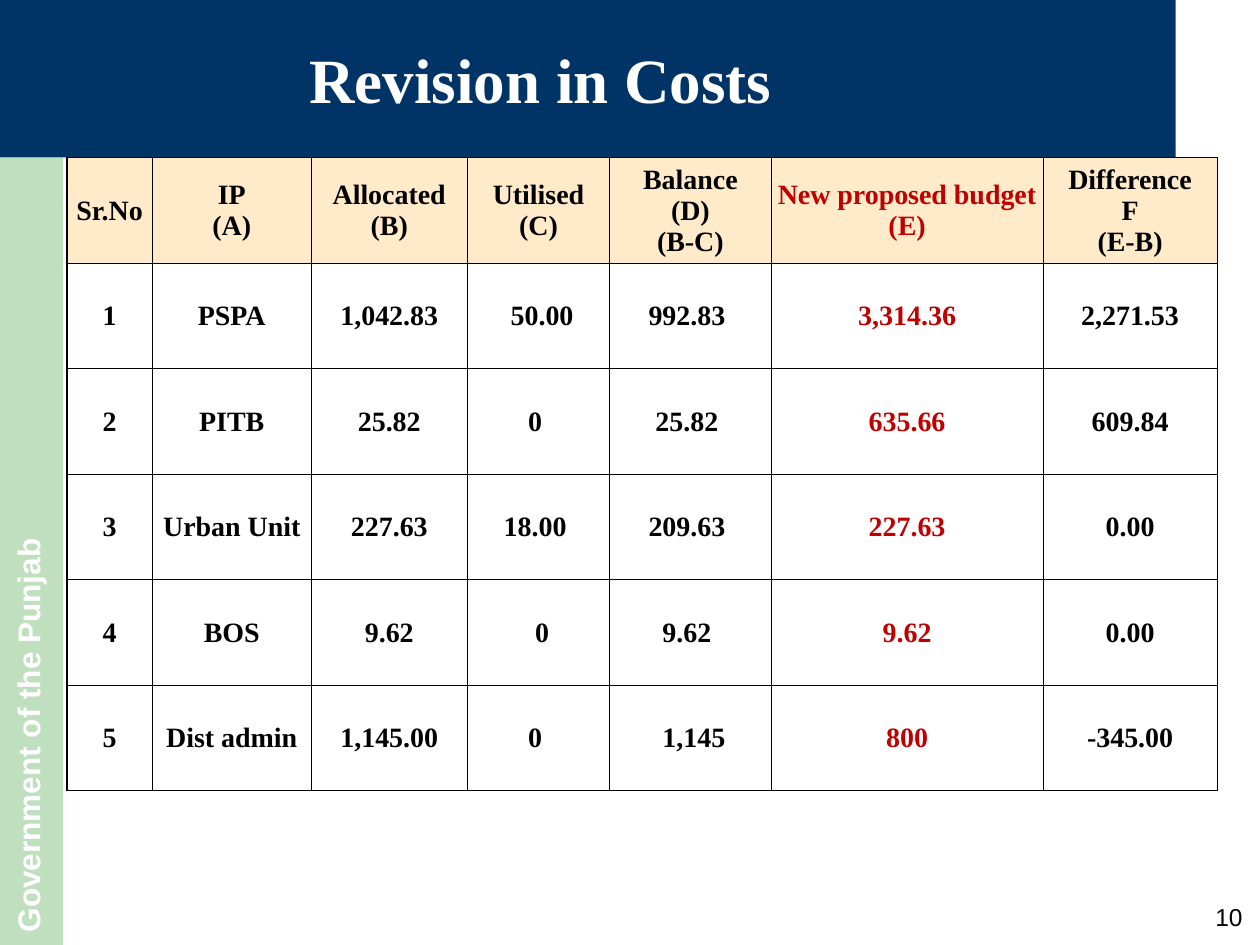
"""Build the slide with the table of cost revisions."""
from dataclasses import dataclass

from lxml import etree
from pptx import Presentation
from pptx.dml.color import RGBColor
from pptx.enum.shapes import MSO_SHAPE
from pptx.enum.text import MSO_ANCHOR, PP_ALIGN
from pptx.oxml.ns import qn
from pptx.util import Inches, Pt

RECTANGLE = MSO_SHAPE.RECTANGLE
MIDDLE, TOP = MSO_ANCHOR.MIDDLE, MSO_ANCHOR.TOP
LEFT, CENTER, RIGHT = PP_ALIGN.LEFT, PP_ALIGN.CENTER, PP_ALIGN.RIGHT
SLIDE_WIDTH, SLIDE_HEIGHT = Inches(10), Inches(7.5)
TITLE_ONLY_LAYOUT = 5


@dataclass(frozen=True)
class Theme:
    navy: str = "003366"
    green: str = "008000"
    cream: str = "FFEACA"
    red: str = "C00000"
    black: str = "000000"
    white: str = "FFFFFF"
    serif: str = "Times New Roman"
    sans: str = "Arial"
    title_size: int = 36
    band_size: int = 18
    table_size: int = 16
    number_size: int = 14
    outer_line: float = 1
    inner_line: float = 0.5


@dataclass(frozen=True)
class Area:
    """Shares of the slide's width and height."""
    left: float
    top: float
    width: float
    height: float

    def lengths(self) -> tuple:
        return (int(self.left * SLIDE_WIDTH), int(self.top * SLIDE_HEIGHT),
                int(self.width * SLIDE_WIDTH), int(self.height * SLIDE_HEIGHT))


@dataclass(frozen=True)
class Column:
    heading: str
    width: float
    values: tuple
    color: str


THEME = Theme()
HEADER_HEIGHT = 1 / 6
TITLE_AREA = Area(0, 0, 0.858, HEADER_HEIGHT)
CORNER_AREA = Area(0.858, 0, 0.075, HEADER_HEIGHT)
BAND_AREA = Area(0, HEADER_HEIGHT, 0.05, 1 - HEADER_HEIGHT)
TABLE_AREA = Area(0.053, HEADER_HEIGHT, 0.914, 0.67)
NUMBER_AREA = Area(0.879, 0.948, 0.117, 0.04)
COLUMNS = (
    Column("Sr.No", 0.068, ("1", "2", "3", "4", "5"), THEME.black),
    Column("IP\n(A)", 0.126, ("PSPA", "PITB", "Urban Unit", "BOS", "Dist admin"), THEME.black),
    Column("Allocated\n(B)", 0.124, ("1,042.83", "25.82", "227.63", "9.62", "1,145.00"), THEME.black),
    Column("Utilised\n(C)", 0.113, (" 50.00", "0 ", "18.00 ", " 0", "0 "), THEME.black),
    Column("Balance\n(D)\n(B-C)", 0.128, ("992.83 ", "25.82 ", "209.63 ", "9.62 ", " 1,145"), THEME.black),
    Column("New proposed budget\n(E)", 0.216, ("3,314.36", "635.66", "227.63", "9.62", "800"), THEME.red),
    Column("Difference\nF\n(E-B)", 0.138, ("2,271.53", "609.84", "0.00", "0.00", "-345.00"), THEME.black),
)


def write_text(frame, text: str, *, size: float, font: str, color: str,
               bold: bool = True, align=CENTER) -> None:
    frame.text = text
    for paragraph in frame.paragraphs:
        paragraph.alignment = align
        for run in paragraph.runs:
            run.font.size, run.font.name, run.font.bold = Pt(size), font, bold
            run.font.color.rgb = RGBColor.from_string(color)


def place(shape, area: Area) -> None:
    shape.left, shape.top, shape.width, shape.height = area.lengths()


def paint(shape, color: str) -> None:
    shape.fill.solid()
    shape.fill.fore_color.rgb = RGBColor.from_string(color)


def add_rectangle(slide, area: Area, color: str):
    shape = slide.shapes.add_shape(RECTANGLE, *area.lengths())
    shape.shadow.inherit = False
    shape.line.fill.background()
    paint(shape, color)
    return shape


def add_title(slide) -> None:
    title = slide.shapes.title
    place(title, TITLE_AREA)
    paint(title, THEME.navy)
    title.text_frame.vertical_anchor = MIDDLE
    write_text(title.text_frame, "Revision in Costs", size=THEME.title_size,
               font=THEME.serif, color=THEME.white)


def add_side_band(slide) -> None:
    band = add_rectangle(slide, BAND_AREA, THEME.green)
    color = band.fill._xPr.find(qn("a:solidFill"))[0]
    etree.SubElement(color, qn("a:alpha"), val="25000")
    frame = band.text_frame
    frame.vertical_anchor = MIDDLE
    frame.margin_left, frame.margin_right, frame.margin_bottom = 0, Inches(0.06), Inches(0.1)
    frame._txBody.bodyPr.set("vert", "vert270")
    write_text(frame, "Government of the Punjab", size=THEME.band_size,
               font=THEME.sans, color=THEME.white, align=LEFT)


def add_page_number(slide) -> None:
    frame = slide.shapes.add_textbox(*NUMBER_AREA.lengths()).text_frame
    frame.word_wrap = True
    frame.vertical_anchor = TOP
    write_text(frame, "10", size=THEME.number_size, font=THEME.sans,
               color=THEME.black, bold=False, align=RIGHT)


def set_borders(cell, row: int, column: int) -> None:
    outer_sides = {"L": column == 0, "T": row == 0}
    properties = cell._tc.get_or_add_tcPr()
    for side in "LRTB":
        width = THEME.outer_line if outer_sides.get(side) else THEME.inner_line
        line = etree.SubElement(properties, qn(f"a:ln{side}"), w=str(Pt(width)))
        fill = etree.SubElement(line, qn("a:solidFill"))
        etree.SubElement(fill, qn("a:srgbClr"), val=THEME.black)


def format_cell(cell, row: int, column: int) -> None:
    set_borders(cell, row, column)
    if row == 0:
        paint(cell, THEME.cream)
    else:
        cell.fill.background()
    cell.vertical_anchor = MIDDLE
    cell.margin_left = cell.margin_right = cell.margin_top = Inches(0.01)
    cell.margin_bottom = 0


def add_cost_table(slide) -> None:
    row_count = 1 + len(COLUMNS[0].values)
    table = slide.shapes.add_table(row_count, len(COLUMNS), *TABLE_AREA.lengths()).table
    table.first_row = table.horz_banding = False
    for column_index, column in enumerate(COLUMNS):
        table.columns[column_index].width = int(column.width * SLIDE_WIDTH)
        for row_index, text in enumerate((column.heading, *column.values)):
            cell = table.cell(row_index, column_index)
            format_cell(cell, row_index, column_index)
            write_text(cell.text_frame, text, size=THEME.table_size,
                       font=THEME.serif, color=column.color)


def main() -> None:
    presentation = Presentation()
    presentation.slide_width, presentation.slide_height = SLIDE_WIDTH, SLIDE_HEIGHT
    slide = presentation.slides.add_slide(presentation.slide_layouts[TITLE_ONLY_LAYOUT])
    add_rectangle(slide, CORNER_AREA, THEME.navy)
    add_side_band(slide)
    add_title(slide)
    add_page_number(slide)
    add_cost_table(slide)
    presentation.save("out.pptx")


if __name__ == "__main__":
    main()
